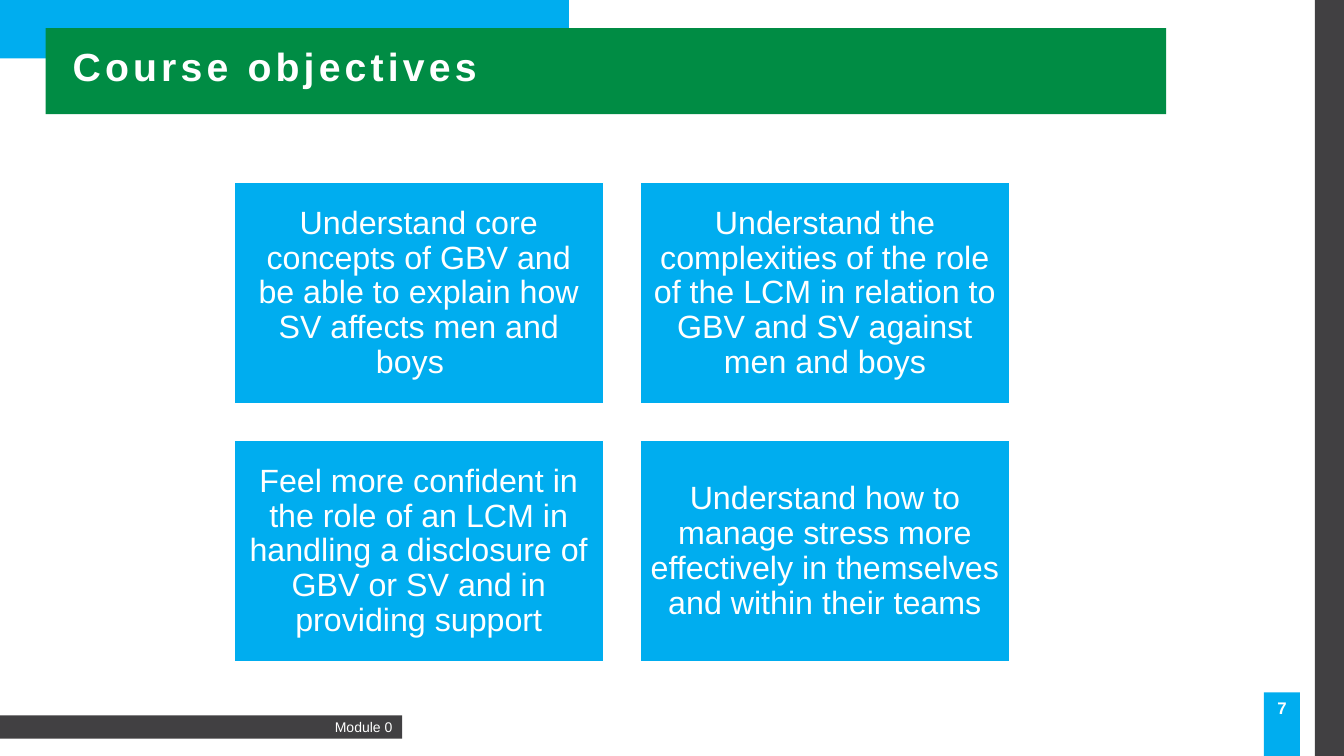
from dataclasses import dataclass

from pptx import Presentation
from pptx.dml.color import RGBColor
from pptx.enum.shapes import MSO_SHAPE
from pptx.enum.text import MSO_ANCHOR as Anchor, PP_ALIGN as Align
from pptx.shapes.autoshape import Shape
from pptx.slide import Slide
from pptx.util import Pt

WHITE = RGBColor(0xFF, 0xFF, 0xFF)
BLUE = RGBColor(0x00, 0xAD, 0xEF)
GREEN = RGBColor(0x00, 0x8C, 0x44)
GREY = RGBColor(0x41, 0x40, 0x42)

CARD_W, CARD_H = 263.7, 158.2
CARD_LEFT, CARD_TOP = 167.4, 130.5
CARD_GAP_X, CARD_GAP_Y = 26.4, 26.1
COLUMNS = 2

OBJECTIVES = [
    "Understand core concepts of GBV and be able to explain how SV affects men and boys  ",
    "Understand the complexities of the role of the LCM in relation to GBV and SV against men and boys",
    "Feel more confident in the role of an LCM in handling a disclosure of GBV or SV and in providing support",
    "Understand how to manage stress more effectively in themselves and within their teams",
]


@dataclass(frozen=True)
class Box:
    left: float
    top: float
    width: float
    height: float


def add_rect(s: Slide, box: Box, fill: RGBColor, outlined: bool = False) -> Shape:
    sp = s.shapes.add_shape(MSO_SHAPE.RECTANGLE, Pt(box.left), Pt(box.top),
                            Pt(box.width), Pt(box.height))
    sp.shadow.inherit = False
    sp.fill.solid()
    sp.fill.fore_color.rgb = fill
    if outlined:
        sp.line.color.rgb = WHITE
        sp.line.width = Pt(1)
    else:
        sp.line.fill.background()
    return sp


def write(sp: Shape, text: str, *, size: float, align: Align = Align.CENTER,
          anchor: Anchor = Anchor.MIDDLE, bold: bool = False, inset_x: float = 7.2,
          inset_y: float = 3.6, line_spacing: float = 1.0, tracking: float = 0) -> None:
    tf = sp.text_frame
    tf.word_wrap = True
    tf.vertical_anchor = anchor
    tf.margin_left = tf.margin_right = Pt(inset_x)
    tf.margin_top = tf.margin_bottom = Pt(inset_y)
    p = tf.paragraphs[0]
    p.alignment = align
    p.line_spacing = line_spacing
    r = p.add_run()
    r.text = text
    r.font.name = "Arial"
    r.font.size = Pt(size)
    r.font.bold = bold
    r.font.color.rgb = WHITE
    if tracking:
        r.font._element.set("spc", str(round(tracking * 100)))


def add_objectives(s: Slide) -> None:
    for i, text in enumerate(OBJECTIVES):
        row, col = divmod(i, COLUMNS)
        box = Box(CARD_LEFT + col * (CARD_W + CARD_GAP_X),
                  CARD_TOP + row * (CARD_H + CARD_GAP_Y), CARD_W, CARD_H)
        write(add_rect(s, box, BLUE, outlined=True), text, size=23,
              inset_y=7.2, line_spacing=0.9)


def main() -> None:
    prs = Presentation()
    prs.slide_width, prs.slide_height = Pt(960), Pt(540)
    s = prs.slides.add_slide(prs.slide_layouts[6])

    add_rect(s, Box(0, -1.4, 406.4, 43.2), BLUE)
    add_rect(s, Box(32.6, 20, 800.4, 61.6), GREEN)
    add_rect(s, Box(939.3, 0, 20.7, 540), GREY)

    footer = add_rect(s, Box(-36.7, 511, 324, 16.6), GREY)
    write(footer, "Module 0", size=10, align=Align.RIGHT)
    page = add_rect(s, Box(902.8, 494.6, 25.8, 58.3), BLUE)
    write(page, "7", size=12, bold=True, anchor=Anchor.TOP, inset_x=2.9)

    title = s.shapes.add_textbox(Pt(44.8), Pt(27.4), Pt(653), Pt(43.2))
    write(title, "Course objectives", size=28, bold=True, align=Align.LEFT,
          line_spacing=0.9, tracking=3)

    add_objectives(s)
    prs.save("out.pptx")


if __name__ == "__main__":
    main()
